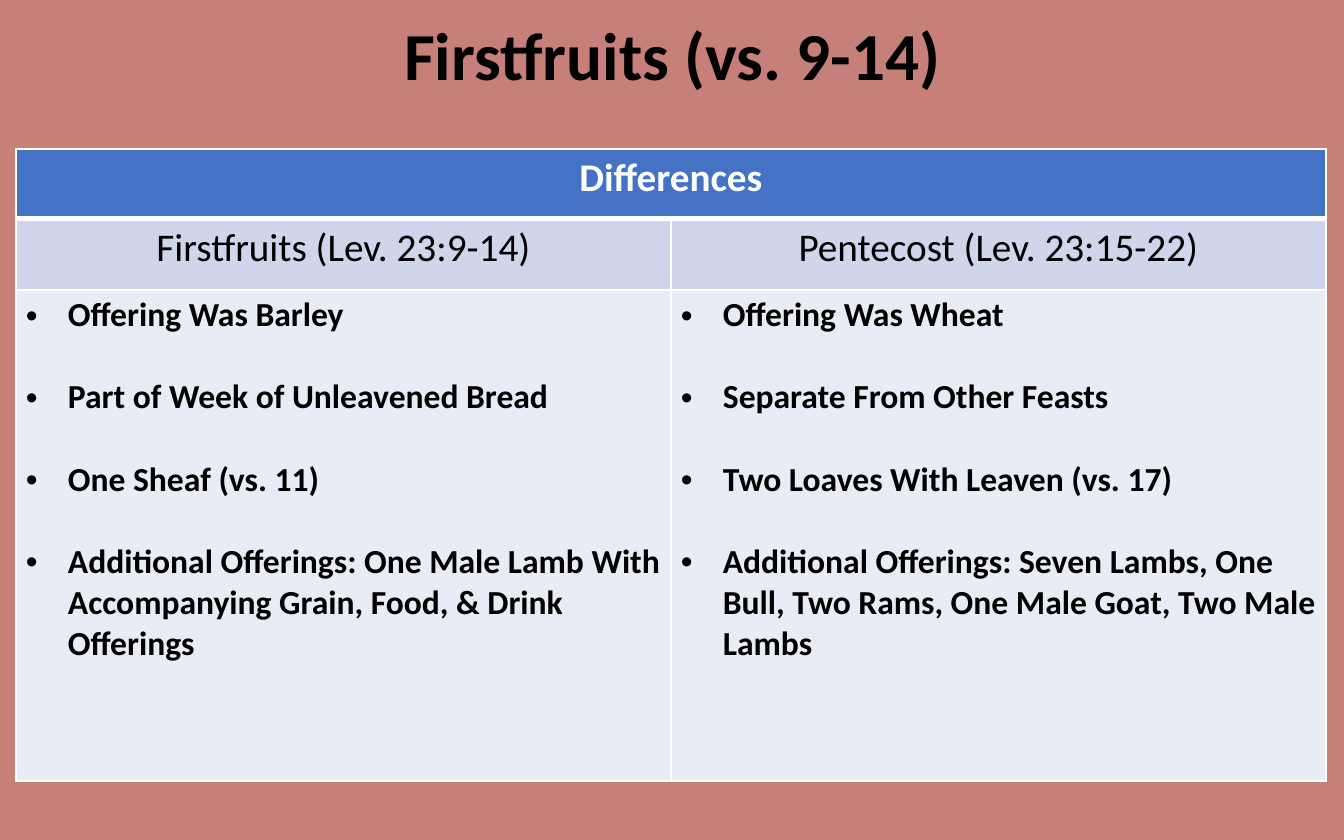
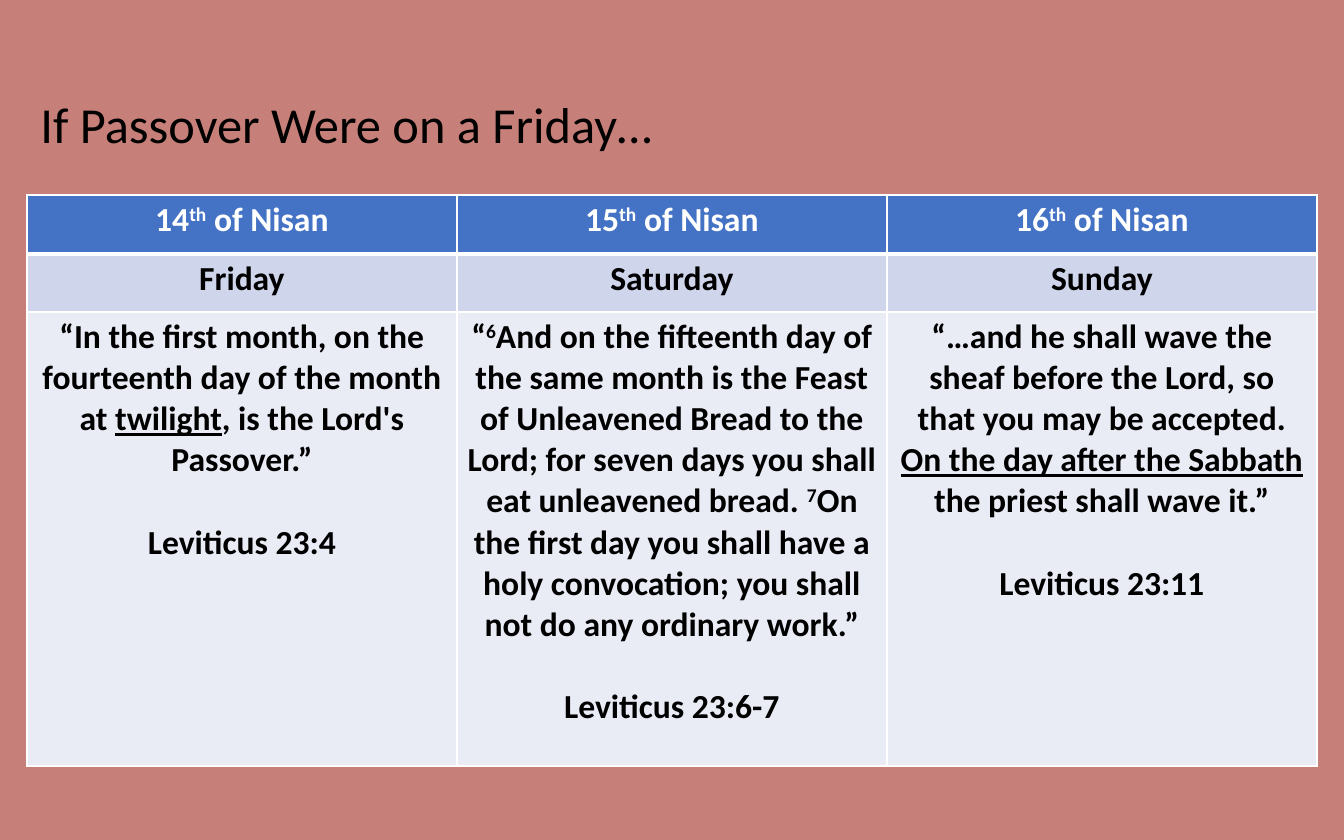
from lxml import etree
from pptx import Presentation
from pptx.dml.color import RGBColor
from pptx.enum.text import MSO_ANCHOR, MSO_AUTO_SIZE, PP_ALIGN
from pptx.oxml.ns import qn
from pptx.util import Emu, Pt

LEFT, CENTER = PP_ALIGN.LEFT, PP_ALIGN.CENTER
TOP, MIDDLE = MSO_ANCHOR.TOP, MSO_ANCHOR.MIDDLE
NO_AUTOSIZE = MSO_AUTO_SIZE.NONE
TITLE_ONLY = 5

EMU_PER_PX = 914400 / 134.4
FONT = "Calibri"
BACKGROUND, INK, WHITE = "C78079", "000000", "FFFFFF"
ROW_FILLS = ["4472C4", "CFD5EA", "E9EBF5"]
BODY_SIZE = 18
BULLET_INDENT = 42
PARAGRAPH_GAP = 22
SUPERSCRIPT, UNDERLINE = "superscript", "underline"

OFFERINGS = [
    ["Offering Was Barley",
     "Part of Week of Unleavened Bread",
     "One Sheaf (vs. 11)",
     "Additional Offerings: One Male Lamb With Accompanying Grain, Food, & Drink Offerings"],
    ["Offering Was Wheat",
     "Separate From Other Feasts",
     "Two Loaves With Leaven (vs. 17)",
     "Additional Offerings: Seven Lambs, One Bull, Two Rams, One Male Goat, Two Male Lambs"],
]

# Each day: number in Nisan, weekday, verse spans, reference
DAYS = [
    ("14", "Friday",
     ["“In the first month, on the fourteenth day of the month at ",
      ("twilight", UNDERLINE), ", is the Lord's Passover.”"],
     "Leviticus 23:4"),
    ("15", "Saturday",
     ["“", ("6", SUPERSCRIPT),
      "And on the fifteenth day of the same month is the Feast of Unleavened Bread "
      "to the Lord; for seven days you shall eat unleavened bread. ",
      ("7", SUPERSCRIPT),
      "On the first day you shall have a holy convocation; "
      "you shall not do any ordinary work.”"],
     "Leviticus 23:6-7"),
    ("16", "Sunday",
     ["“…and he shall wave the sheaf before the Lord, so that you may be accepted. ",
      ("On the day after the Sabbath", UNDERLINE), " the priest shall wave it.”"],
     "Leviticus 23:11"),
]


def px(length):
    return Emu(round(length * EMU_PER_PX))


def color(hex_string):
    return RGBColor.from_string(hex_string)


def style_font(font, size, hex_color, bold):
    font.name = FONT
    font.size = Pt(size)
    font.bold = bold
    font.color.rgb = color(hex_color)


def add_spans(para, spans):
    """Fill a paragraph from plain strings and (text, mark) pairs."""
    for item in spans:
        text, mark = (item, None) if isinstance(item, str) else item
        span = para.add_run()
        span.text = text
        if mark == UNDERLINE:
            span.font.underline = True
        elif mark == SUPERSCRIPT:
            span.font._element.set("baseline", "30000")


def add_bullet(para):
    properties = para._p.get_or_add_pPr()
    properties.set("marL", str(px(BULLET_INDENT)))
    properties.set("indent", str(-px(BULLET_INDENT)))
    etree.SubElement(properties, qn("a:buFont"), typeface="Arial")
    etree.SubElement(properties, qn("a:buChar"), char="•")


def set_borders(cell, bottom_width=1):
    properties = cell._tc.get_or_add_tcPr()
    for side in "LRTB":
        width = bottom_width if side == "B" else 1
        line = etree.SubElement(properties, qn(f"a:ln{side}"), w=str(Pt(width)))
        fill = etree.SubElement(line, qn("a:solidFill"))
        etree.SubElement(fill, qn("a:srgbClr"), val=WHITE)


def fill_cell(cell, paragraphs, size=BODY_SIZE, hex_color=INK, bold=True, bullets=False):
    frame = cell.text_frame
    for index, spans in enumerate(paragraphs):
        para = frame.add_paragraph() if index else frame.paragraphs[0]
        para.alignment = LEFT if bullets else CENTER
        if index:
            para.space_before = Pt(PARAGRAPH_GAP)
        if bullets:
            add_bullet(para)
        style_font(para.font, size, hex_color, bold)
        add_spans(para, spans)


def add_grid(page, left, top, column_count, column_width, row_heights):
    """Add a table whose cells have their fills, borders and margins."""
    frame = page.shapes.add_table(len(row_heights), column_count, px(left), px(top),
                                  px(column_width * column_count), px(sum(row_heights)))
    table = frame.table
    for column in table.columns:
        column.width = px(column_width)
    for index, (row, height) in enumerate(zip(table.rows, row_heights)):
        row.height = px(height)
        for cell in row.cells:
            set_borders(cell, bottom_width=1 if index else 3)
            cell.fill.solid()
            cell.fill.fore_color.rgb = color(ROW_FILLS[index])
            cell.margin_left = cell.margin_right = px(10)
            cell.margin_top = cell.margin_bottom = px(5)
    return table


def add_page(deck, title, box, size, bold, alignment, anchor, line_spacing):
    page = deck.slides.add_slide(deck.slide_layouts[TITLE_ONLY])
    heading = page.shapes.title
    heading.left, heading.top, heading.width, heading.height = map(px, box)
    frame = heading.text_frame
    frame.auto_size = NO_AUTOSIZE
    frame.word_wrap = True
    frame.vertical_anchor = anchor
    para = frame.paragraphs[0]
    para.alignment = alignment
    para.line_spacing = line_spacing
    style_font(para.font, size, INK, bold)
    add_spans(para, [title])
    return page


def build_differences(deck):
    page = add_page(deck, "Firstfruits (vs. 9-14)", (141, 9, 1063, 99),
                    36, True, CENTER, MIDDLE, 0.9)
    table = add_grid(page, 16, 149, 2, 655, [70, 71, 491])
    table.cell(0, 0).merge(table.cell(0, 1))
    fill_cell(table.cell(0, 0), [["Differences"]], 21, WHITE)
    feasts = ["Firstfruits (Lev. 23:9-14)", "Pentecost (Lev. 23:15-22)"]
    for column, (feast, offerings) in enumerate(zip(feasts, OFFERINGS)):
        fill_cell(table.cell(1, column), [[feast]], 21, bold=False)
        fill_cell(table.cell(2, column), [[line] for line in offerings], bullets=True)


def build_passover_days(deck):
    page = add_page(deck, "If Passover Were on a Friday…", (27, 86, 956, 75),
                    27, False, LEFT, TOP, 1.0)
    table = add_grid(page, 27, 195, 3, 430, [59, 58, 454])
    for column, (number, weekday, verse, reference) in enumerate(DAYS):
        date = [number, ("th", SUPERSCRIPT), " of Nisan"]
        fill_cell(table.cell(0, column), [date], hex_color=WHITE)
        fill_cell(table.cell(1, column), [[weekday]])
        fill_cell(table.cell(2, column), [verse, [reference]])


def main():
    deck = Presentation()
    deck.slide_width, deck.slide_height = px(1344), px(840)
    background = deck.slide_master.background.fill
    background.solid()
    background.fore_color.rgb = color(BACKGROUND)
    build_differences(deck)
    build_passover_days(deck)
    deck.save("out.pptx")


if __name__ == "__main__":
    main()
